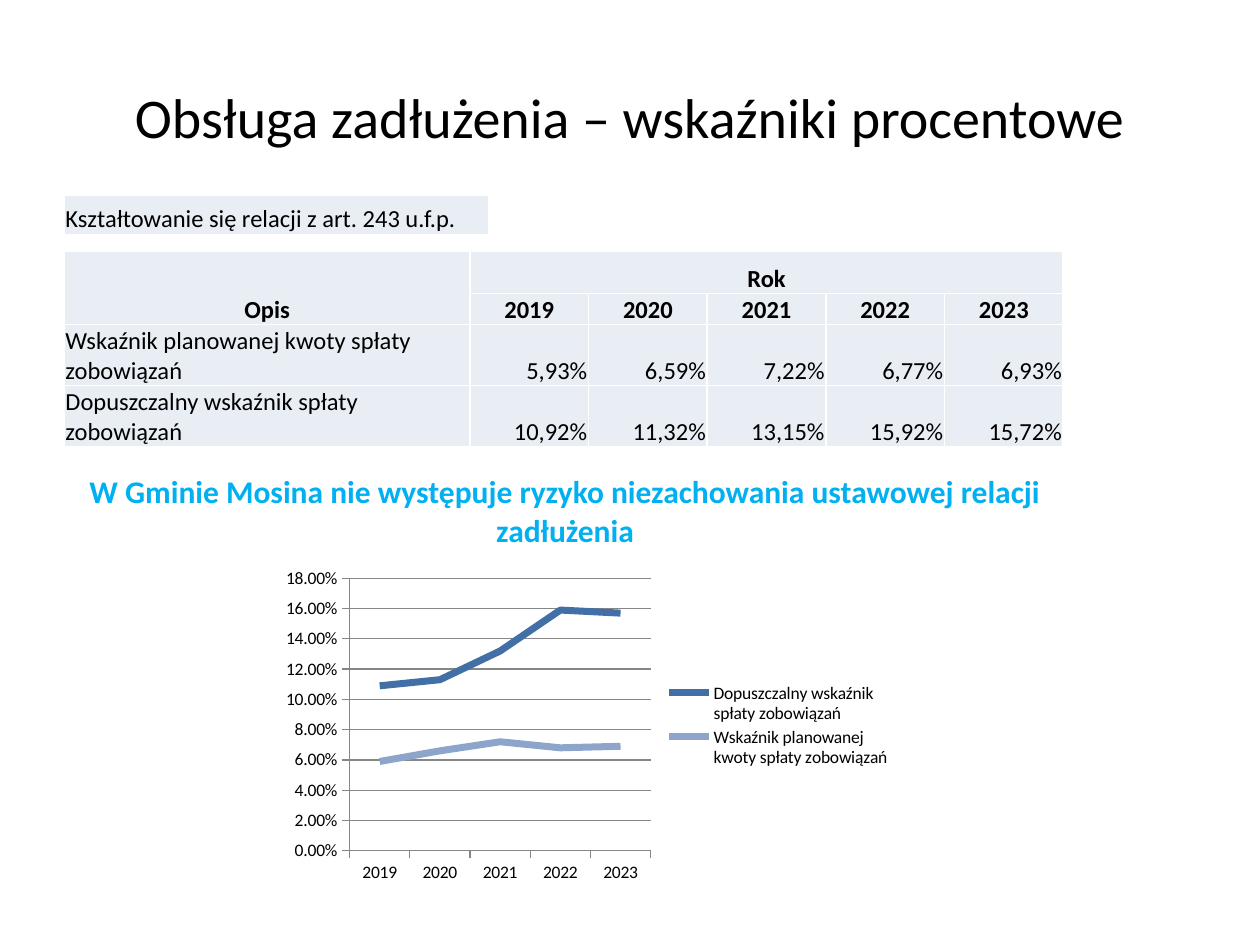
from lxml import etree
from pptx import Presentation, util as u
from pptx.chart.data import CategoryChartData
from pptx.dml.color import RGBColor
from pptx.enum import chart as ch, text
from pptx.oxml import ns

FONT = "Calibri"
LEFT = 0.51
TABLE_WIDTH, LABEL_WIDTH = 7.93, 3.22
PALE, WHITE, BLACK, SKY, GREY = "E9EDF4", "FFFFFF", "000000", "00B0F0", "868686"
YEARS = ["2019", "2020", "2021", "2022", "2023"]
PLANNED = "Wskaźnik planowanej kwoty spłaty zobowiązań"
ALLOWED = "Dopuszczalny wskaźnik spłaty zobowiązań"
RATIOS = {
    PLANNED: [5.93, 6.59, 7.22, 6.77, 6.93],
    ALLOWED: [10.92, 11.32, 13.15, 15.92, 15.72],
}
LINE_COLOURS = {ALLOWED: "416FA6", PLANNED: "8EA5CB"}
ALIGN = text.PP_ALIGN


def colour(code):
    """Return the colour for a hex string."""
    return RGBColor.from_string(code)


def set_font(font, size, code=BLACK, bold=False):
    """Format a font."""
    font.name, font.size, font.bold = FONT, u.Pt(size), bold
    font.color.rgb = colour(code)


def write(frame, words, align, size, code=BLACK, bold=False):
    """Write one formatted run into a text frame."""
    paragraph = frame.paragraphs[0]
    paragraph.alignment = align
    run = paragraph.add_run()
    run.text = words
    set_font(run.font, size, code, bold)


def add_borders(cell):
    """Give a cell thin white borders."""
    properties = cell._tc.get_or_add_tcPr()
    for place, side in enumerate(("lnL", "lnR", "lnT", "lnB")):
        line = etree.Element(ns.qn(f"a:{side}"), w=str(u.Pt(1)))
        fill = etree.SubElement(line, ns.qn("a:solidFill"))
        etree.SubElement(fill, ns.qn("a:srgbClr"), val=WHITE)
        properties.insert(place, line)


def add_grid(slide, top, widths, heights, fill=PALE):
    """Add an empty table with filled, bottom-anchored cells."""
    frame = slide.shapes.add_table(
        len(heights), len(widths), u.Inches(LEFT), u.Inches(top),
        u.Inches(sum(widths)), u.Inches(sum(heights)))
    grid = frame.table
    grid.first_row = grid.horz_banding = False
    for column, width in zip(grid.columns, widths):
        column.width = u.Inches(width)
    for row, height in zip(grid.rows, heights):
        row.height = u.Inches(height)
    for cell in grid.iter_cells():
        cell.margin_left = cell.margin_right = cell.margin_top = u.Inches(0.01)
        cell.margin_bottom = 0
        cell.vertical_anchor = text.MSO_ANCHOR.BOTTOM
        cell.fill.solid()
        cell.fill.fore_color.rgb = colour(fill)
        add_borders(cell)
    return grid


def add_banner(slide, words, top, width, height, fill, align, **style):
    """Add a one-cell table holding a line of text."""
    cell = add_grid(slide, top, [width], [height], fill).cell(0, 0)
    write(cell.text_frame, words, align, **style)


def add_ratio_table(slide):
    """Add the table of ratios by year."""
    year_width = (TABLE_WIDTH - LABEL_WIDTH) / len(YEARS)
    grid = add_grid(slide, 1.99, [LABEL_WIDTH] + [year_width] * len(YEARS),
                    [0.34, 0.24, 0.48, 0.48])
    grid.cell(0, 0).merge(grid.cell(1, 0))
    grid.cell(0, 1).merge(grid.cell(0, len(YEARS)))
    headings = {(0, 0): "Opis", (0, 1): "Rok"}
    headings.update({(1, col): year for col, year in enumerate(YEARS, 1)})
    for place, words in headings.items():
        write(grid.cell(*place).text_frame, words, ALIGN.CENTER, 14, bold=True)
    for row, (label, ratios) in enumerate(RATIOS.items(), 2):
        write(grid.cell(row, 0).text_frame, label, ALIGN.LEFT, 14)
        for col, ratio in enumerate(ratios, 1):
            percent = f"{ratio:.2f}%".replace(".", ",")
            write(grid.cell(row, col).text_frame, percent, ALIGN.RIGHT, 14)


def style_line(line, code, width):
    """Set the colour and width of a line."""
    line.color.rgb = colour(code)
    line.width = u.Pt(width)


def add_ratio_chart(slide):
    """Add the line chart comparing both ratios."""
    data = CategoryChartData(number_format="0.00%")
    data.categories = YEARS
    for label in LINE_COLOURS:
        data.add_series(label, [round(ratio / 100, 3) for ratio in RATIOS[label]])
    chart = slide.shapes.add_chart(
        ch.XL_CHART_TYPE.LINE, u.Inches(2.17), u.Inches(4.46),
        u.Inches(5), u.Inches(2.6), data).chart
    set_font(chart.font, 10)
    chart.has_title = False
    chart.has_legend = True
    chart.legend.position = ch.XL_LEGEND_POSITION.RIGHT
    chart.legend.include_in_layout = False
    chart.plots[0].vary_by_categories = False
    for series in chart.plots[0].series:
        series.smooth = False
        series.marker.style = ch.XL_MARKER_STYLE.NONE
        style_line(series.format.line, LINE_COLOURS[series.name], 4)
    for axis in (chart.category_axis, chart.value_axis):
        axis.major_tick_mark = ch.XL_TICK_MARK.OUTSIDE
        style_line(axis.format.line, GREY, 0.75)
    scale = chart.value_axis
    scale.minimum_scale, scale.maximum_scale, scale.major_unit = 0, 0.18, 0.02
    scale.tick_labels.number_format = "0.00%"
    scale.tick_labels.number_format_is_linked = False
    style_line(scale.major_gridlines.format.line, GREY, 0.75)


def add_title(slide, words):
    """Place and fill the title."""
    title = slide.shapes.title
    title.left, title.top = u.Inches(0.5), u.Inches(0.3)
    title.width, title.height = u.Inches(9), u.Inches(1.25)
    title.text_frame.vertical_anchor = text.MSO_ANCHOR.MIDDLE
    write(title.text_frame, words, ALIGN.CENTER, 32)


def main():
    """Build the slide and save it."""
    deck = Presentation()
    deck.slide_width, deck.slide_height = u.Inches(10), u.Inches(7.5)
    slide = deck.slides.add_slide(deck.slide_layouts[5])
    add_title(slide, "Obsługa zadłużenia – wskaźniki procentowe")
    add_ratio_table(slide)
    add_banner(slide, "Kształtowanie się relacji z art. 243 u.f.p.",
               1.55, 3.37, 0.31, PALE, ALIGN.LEFT, size=14)
    add_banner(slide, "W Gminie Mosina nie występuje ryzyko niezachowania ustawowej relacji zadłużenia",
               3.75, 7.95, 0.61, WHITE, ALIGN.CENTER, size=18, code=SKY, bold=True)
    add_ratio_chart(slide)
    deck.save("out.pptx")


if __name__ == "__main__":
    main()
